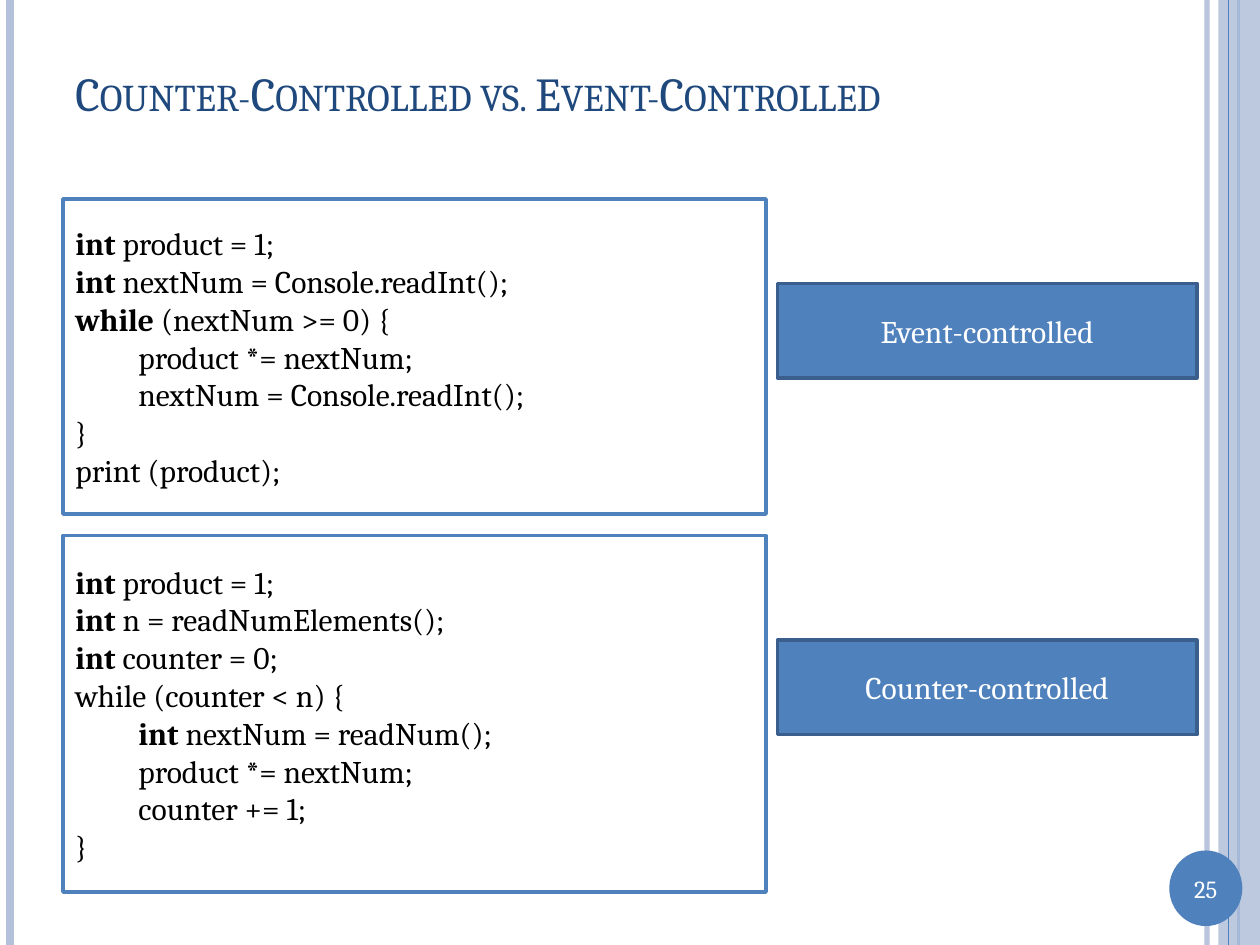
from lxml import etree
from pptx import Presentation
from pptx import util as u
from pptx.dml import color
from pptx.enum import shapes, text
from pptx.oxml import ns

FONT = "Cambria"
BLUE = "4F81BD"
PALE = "B3C1DB"
WHITE = "FFFFFF"

EVENT_CODE = [
    ("int", " product = 1;"),
    ("int", " nextNum = Console.readInt();"),
    ("while", " (nextNum >= 0) {"),
    ("", "\tproduct *= nextNum;"),
    ("", "\tnextNum = Console.readInt();"),
    ("", "}"),
    ("", "print (product);"),
]
COUNTER_CODE = [
    ("int", " product = 1;"),
    ("int", " n = readNumElements();"),
    ("int", " counter = 0;"),
    ("", "while (counter < n) {"),
    ("\tint", " nextNum = readNum();"),
    ("", "\tproduct *= nextNum;"),
    ("", "\tcounter += 1;"),
    ("", "}"),
]


def rgb(value):
    return color.RGBColor.from_string(value)


def set_alpha(owner, percent):
    for tint in owner.iter(ns.qn("a:srgbClr")):
        etree.SubElement(tint, ns.qn("a:alpha")).set("val", str(percent * 1000))


def add_stripe(page, x, hue, width, opacity=100):
    line = page.shapes.add_connector(
        shapes.MSO_CONNECTOR.STRAIGHT,
        u.Inches(x), u.Inches(0), u.Inches(x), u.Inches(7.5))
    line.line.color.rgb = rgb(hue)
    line.line.width = u.Pt(width)
    properties = line._element.spPr
    if opacity < 100:
        set_alpha(properties, opacity)
    etree.SubElement(properties, ns.qn("a:effectLst"))


def add_box(page, place, fill, outline=None, kind=shapes.MSO_SHAPE.RECTANGLE):
    box = page.shapes.add_shape(kind, *map(u.Inches, place))
    box.shadow.inherit = False
    box.fill.solid()
    box.fill.fore_color.rgb = rgb(fill)
    if outline:
        box.line.color.rgb = rgb(outline)
        box.line.width = u.Pt(2)
    else:
        box.line.fill.background()
    return box


def write_lines(box, lines, size, hue, align=text.PP_ALIGN.LEFT):
    frame = box.text_frame
    frame.word_wrap = True
    frame.vertical_anchor = text.MSO_ANCHOR.MIDDLE
    for index, (keyword, rest) in enumerate(lines):
        para = frame.add_paragraph() if index else frame.paragraphs[0]
        para.alignment = align
        para.font.name = FONT
        para.font.size = u.Pt(size)
        para.font.color.rgb = rgb(hue)
        if keyword:
            span = para.add_run()
            span.text = keyword
            span.font.bold = True
        para.add_run().text = rest


def add_label(page, place, wording, size, hue, align=text.PP_ALIGN.LEFT):
    box = page.shapes.add_textbox(*map(u.Inches, place))
    write_lines(box, [("", wording)], size, hue, align)
    return box


def add_title(page, wording):
    box = add_label(page, (0.5, 0.3, 8.67, 0.87), wording, 27, "1F497D")
    span = box.text_frame.paragraphs[0].runs[0]
    span._r.get_or_add_rPr().set("cap", "small")


def add_example(page, top, height, code, tag_top, tag):
    listing = add_box(page, (0.5, top, 5.58, height), WHITE, BLUE)
    write_lines(listing, code, 18, "000000")
    label = add_box(page, (6.17, tag_top, 3.33, 0.75), BLUE, "3A5F8C")
    write_lines(label, [("", tag)], 18, WHITE, text.PP_ALIGN.CENTER)


def add_frame(page, number):
    add_stripe(page, 9.58, PALE, 3, 93)
    add_stripe(page, 0.08, PALE, 4.5)
    add_stripe(page, 9.83, BLUE, 1.5)
    band = add_box(page, (9.67, 0, 0.33, 7.5), PALE)
    set_alpha(band._element.spPr, 87)
    add_stripe(page, 9.75, BLUE, 0.75)
    add_box(page, (9.28, 6.75, 0.58, 0.6), BLUE, kind=shapes.MSO_SHAPE.OVAL)
    add_label(page, (9.28, 6.88, 0.58, 0.34), number, 14, WHITE,
              text.PP_ALIGN.CENTER)


def main():
    deck = Presentation()
    deck.slide_width = u.Inches(10)
    deck.slide_height = u.Inches(7.5)
    page = deck.slides.add_slide(deck.slide_layouts[6])
    add_frame(page, "25")
    add_title(page, "Counter-Controlled vs. Event-Controlled")
    add_example(page, 1.58, 2.5, EVENT_CODE, 2.25, "Event-controlled")
    add_example(page, 4.25, 2.83, COUNTER_CODE, 5.08, "Counter-controlled")
    deck.save("out.pptx")


if __name__ == "__main__":
    main()
